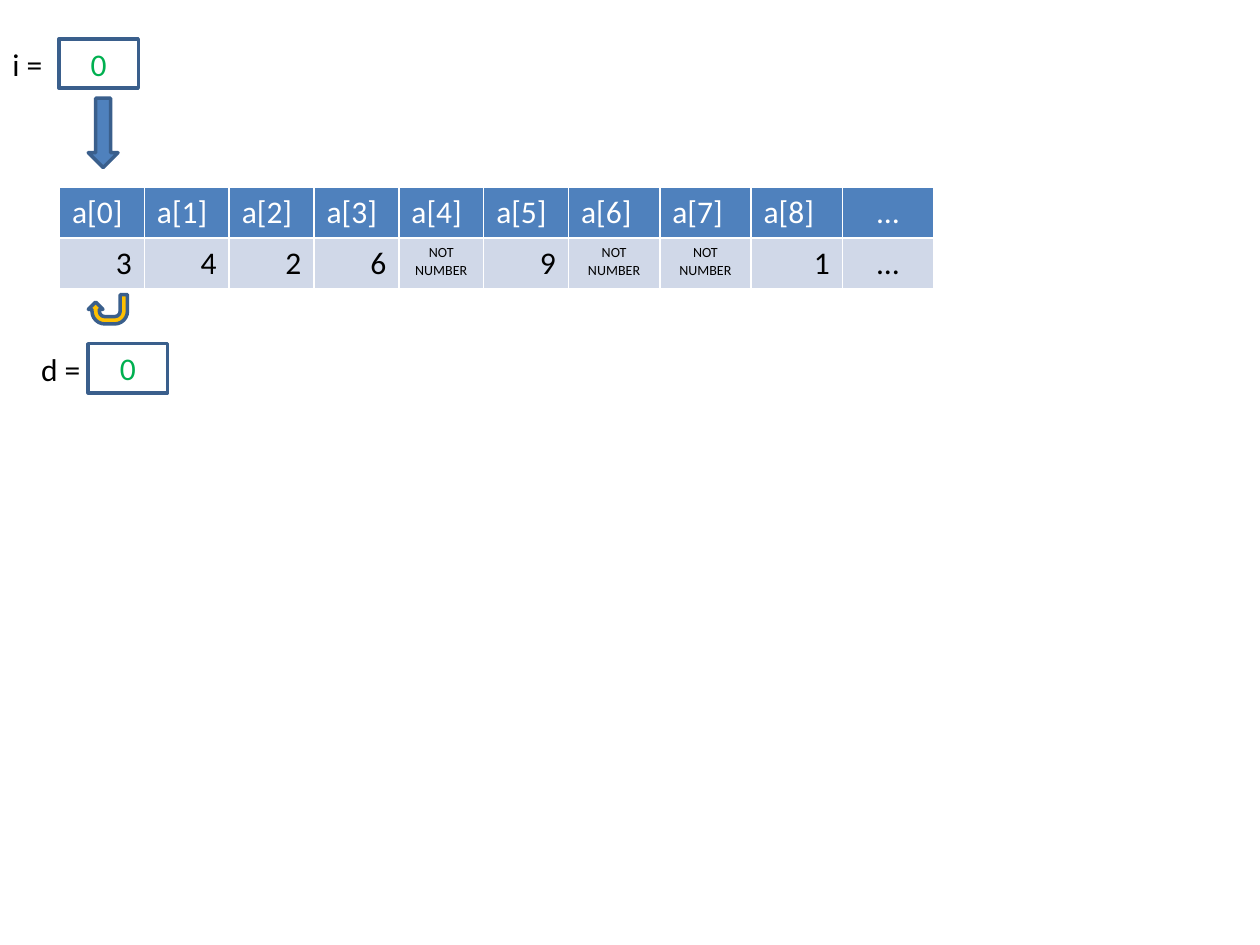
import pptx
import pptx.util
import pptx.dml.color
import pptx.enum.shapes
import pptx.enum.text
import pptx.oxml
import pptx.oxml.ns
from lxml import etree

Cm, Pt = pptx.util.Cm, pptx.util.Pt
ALIGN = pptx.enum.text.PP_ALIGN
PRESET = pptx.enum.shapes.MSO_SHAPE

VALUES = ["3", "4", "2", "6", "NOT NUMBER", "9", "NOT NUMBER", "NOT NUMBER", "1", "…"]
HEADINGS = [f"a[{index}]" for index in range(len(VALUES) - 1)] + ["…"]
COLUMN_WIDTHS = [1.71] * 6 + [1.84] * 4
ARRAY_LEFT, ARRAY_TOP, ROW_HEIGHT = 1.2, 3.77, 1.03

VARIABLES = [
    ("i =", "0", (0, 0.79, 1.12), (1.19, 0.79)),
    ("d =", "0", (0.58, 6.93, 1.32), (1.78, 6.93)),
]
BOX_WIDTH, BOX_HEIGHT, LABEL_HEIGHT = 1.6, 0.99, 1.02

ARROWS = [
    (PRESET.DOWN_ARROW, (1.78, 1.98, 0.6, 1.4), "4F81BD", 0),
    (PRESET.U_TURN_ARROW, (1.78, 5.94, 0.79, 0.59), "FFC000", 180),
]
OUTLINE, WHITE, BLACK, GREEN = "3A5F8C", "FFFFFF", "000000", "00B050"
HEADING_FILL, VALUE_FILL = "4F81BD", "D0D8E8"


def paint(target, color):
    if hasattr(target, "solid"):
        target.solid()
        target = target.fore_color
    target.rgb = pptx.dml.color.RGBColor.from_string(color)


def write(frame, text, color, size=18, align=ALIGN.LEFT):
    paragraph = frame.paragraphs[0]
    paragraph.alignment = align
    run = paragraph.add_run()
    run.text = text
    run.font.name = "Calibri"
    run.font.size = Pt(size)
    run.font.bold = False
    paint(run.font.color, color)


def outline_cell(cell):
    properties = cell._tc.get_or_add_tcPr()
    for position, side in enumerate(("lnL", "lnR", "lnT", "lnB")):
        border = etree.Element(pptx.oxml.ns.qn(f"a:{side}"), w=str(Pt(1)))
        fill = etree.SubElement(border, pptx.oxml.ns.qn("a:solidFill"))
        etree.SubElement(fill, pptx.oxml.ns.qn("a:srgbClr"), val=WHITE)
        properties.insert(position, border)


def alignment(text):
    if text.isdigit():
        return ALIGN.RIGHT
    return ALIGN.LEFT if text.startswith("a[") else ALIGN.CENTER


def add_array(slide):
    array = slide.shapes.add_table(
        2, len(VALUES), Cm(ARRAY_LEFT), Cm(ARRAY_TOP),
        Cm(sum(COLUMN_WIDTHS)), Cm(2 * ROW_HEIGHT)).table
    array.first_row = array.horz_banding = False
    for column, width in zip(array.columns, COLUMN_WIDTHS):
        column.width = Cm(width)
    rows = [(HEADINGS, HEADING_FILL, WHITE), (VALUES, VALUE_FILL, BLACK)]
    for row, (texts, fill, color) in enumerate(rows):
        array.rows[row].height = Cm(ROW_HEIGHT)
        for column, text in enumerate(texts):
            cell = array.cell(row, column)
            paint(cell.fill, fill)
            outline_cell(cell)
            size = 8 if text == "NOT NUMBER" else 18
            write(cell.text_frame, text, color, size, alignment(text))


def add_outlined(slide, preset, bounds, fill):
    shape = slide.shapes.add_shape(preset, *map(Cm, bounds))
    shape.shadow.inherit = False
    paint(shape.fill, fill)
    paint(shape.line.fill, OUTLINE)
    shape.line.width = Pt(2)
    return shape


def add_variable(slide, name, value, label_place, box_corner):
    left, top, width = label_place
    box = add_outlined(slide, PRESET.RECTANGLE, (*box_corner, BOX_WIDTH, BOX_HEIGHT), WHITE)
    box.text_frame.vertical_anchor = pptx.enum.text.MSO_ANCHOR.MIDDLE
    write(box.text_frame, value, GREEN, align=ALIGN.CENTER)
    label = slide.shapes.add_textbox(Cm(left), Cm(top), Cm(width), Cm(LABEL_HEIGHT))
    label.text_frame.word_wrap = False
    label.text_frame.auto_size = pptx.enum.text.MSO_AUTO_SIZE.SHAPE_TO_FIT_TEXT
    write(label.text_frame, name, BLACK)


def main():
    deck = pptx.Presentation()
    deck.slide_width, deck.slide_height = Cm(25.4), Cm(19.05)
    slide = deck.slides.add_slide(deck.slide_layouts[6])
    add_array(slide)
    for variable in VARIABLES:
        add_variable(slide, *variable)
    for preset, bounds, fill, rotation in ARROWS:
        add_outlined(slide, preset, bounds, fill).rotation = rotation
    deck.save("out.pptx")


if __name__ == "__main__":
    main()
